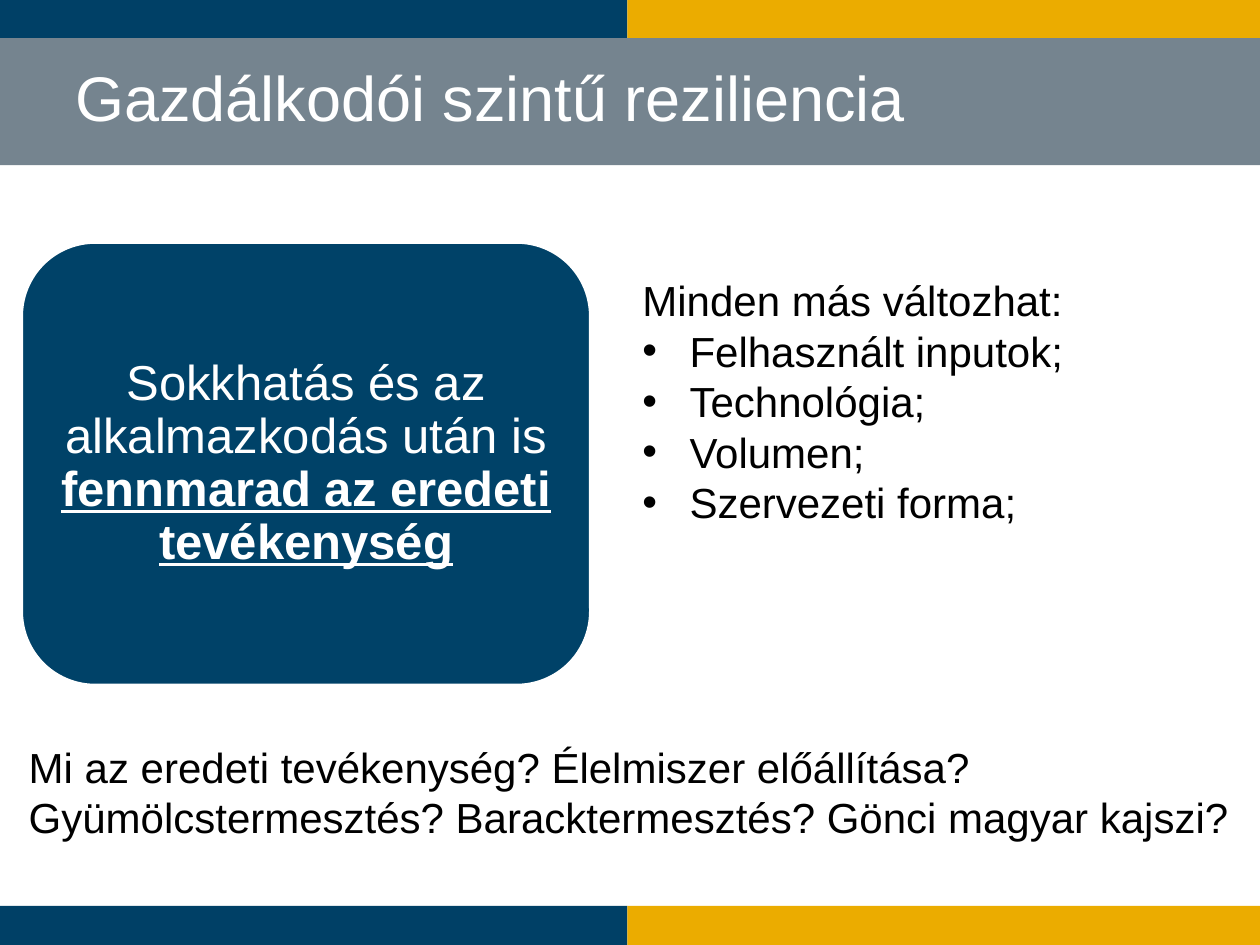
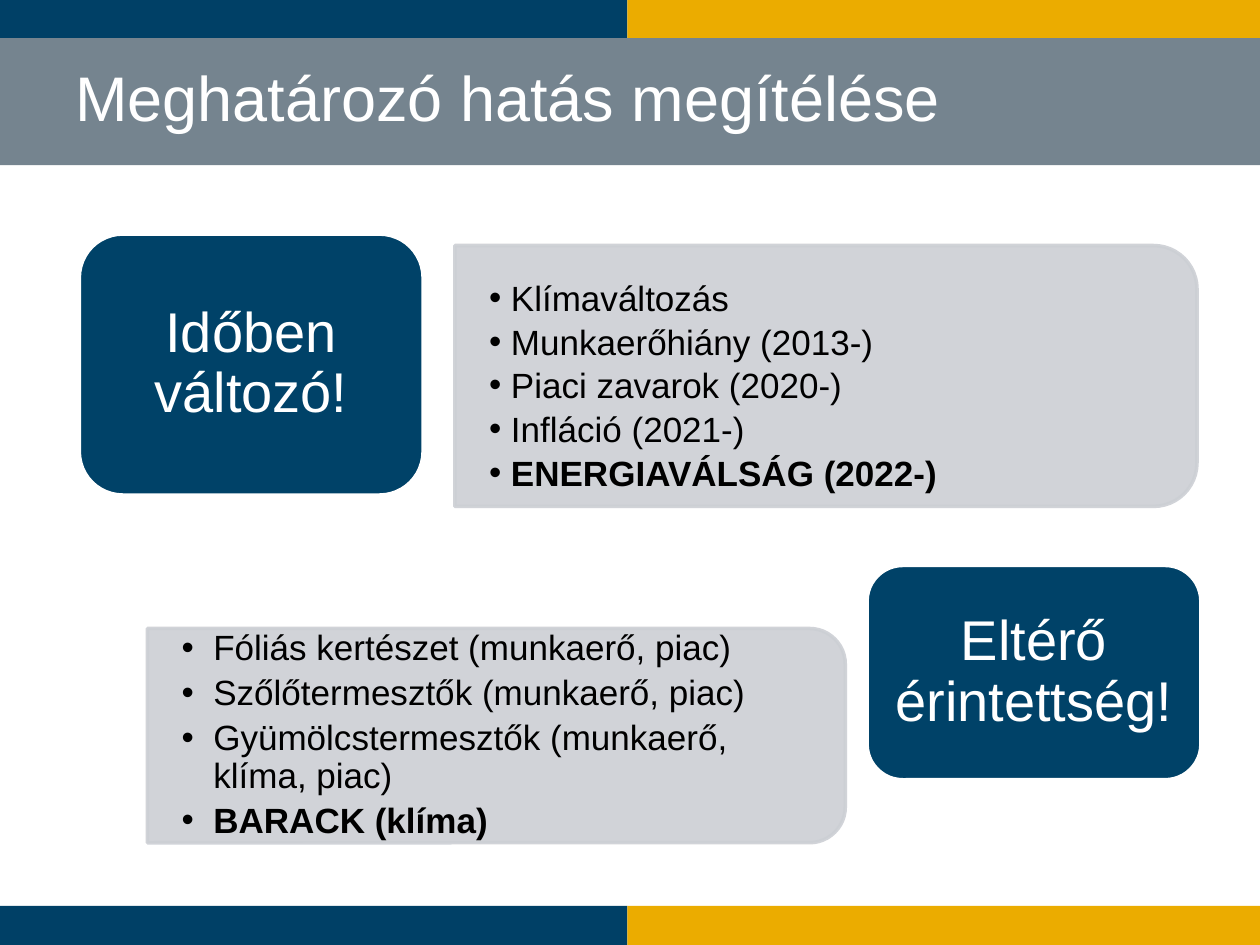
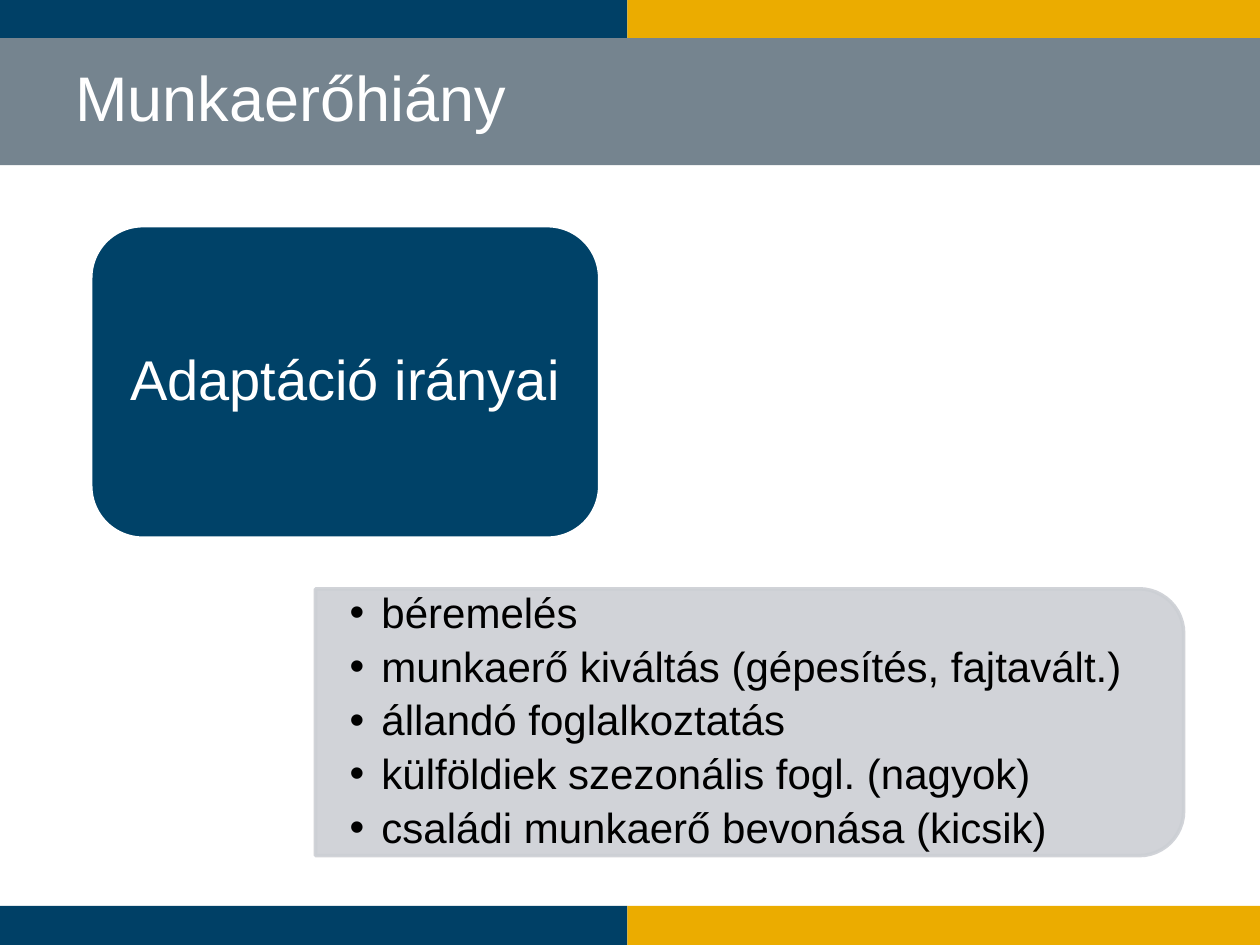
from lxml.etree import SubElement
from pptx import Presentation
from pptx.dml.color import RGBColor
from pptx.enum.shapes import MSO_SHAPE
from pptx.enum.text import MSO_ANCHOR, MSO_AUTO_SIZE, PP_ALIGN
from pptx.oxml.ns import qn
from pptx.util import Cm, Pt

FONT = "Arial"
NAVY, GOLD, SLATE = "004066", "EBAC00", "75848F"
CARD_BLUE, PANEL_GREY = "004268", "CCCFD4"
WHITE, BLACK = "FFFFFF", "000000"

SLIDE_WIDTH, SLIDE_HEIGHT = 25.4, 19.05
BAND_HEIGHT, BAND_SPLIT = 0.79, 12.65
BANDS = [
    (left, top, width, BAND_HEIGHT, color)
    for top in (0, SLIDE_HEIGHT - BAND_HEIGHT)
    for left, width, color in (
        (0, BAND_SPLIT, NAVY),
        (BAND_SPLIT, SLIDE_WIDTH - BAND_SPLIT, GOLD),
    )
] + [(0, 0.77, SLIDE_WIDTH, 2.56, SLATE)]

ONE_LIST, TWO_LISTS = 1, 3  # layout numbers in the template


def rgb(color):
    return RGBColor.from_string(color)


def set_bullet(paragraph, hanging):
    """Hang the paragraph on a dot, or clear the bullet when hanging is 0."""
    properties = paragraph._p.get_or_add_pPr()
    properties.set("marL", str(Cm(hanging)))
    properties.set("indent", str(-Cm(hanging)))
    if hanging:
        SubElement(properties, qn("a:buChar")).set("char", "•")
    else:
        SubElement(properties, qn("a:buNone"))


def write(frame, paragraphs, size, color=BLACK, align=PP_ALIGN.LEFT,
          anchor=MSO_ANCHOR.TOP, margins=(0.25, 0.13), hanging=0,
          line_spacing=1.0, gap=0, underline_strong=False):
    """Fill a frame; a paragraph is a string or a (plain, strong) pair.

    A list whose first line ends in a colon keeps that line unbulleted.
    """
    frame.word_wrap = True
    frame.auto_size = MSO_AUTO_SIZE.NONE
    frame.vertical_anchor = anchor
    frame.margin_left = frame.margin_right = Cm(margins[0])
    frame.margin_top = frame.margin_bottom = Cm(margins[1])
    for number, content in enumerate(paragraphs):
        paragraph = frame.add_paragraph() if number else frame.paragraphs[0]
        plain, strong = (content, "") if isinstance(content, str) else content
        set_bullet(paragraph, 0 if plain.endswith(":") else hanging)
        paragraph.alignment = align
        paragraph.line_spacing = line_spacing
        paragraph.space_before = Pt(gap if number else 0)
        paragraph.space_after = Pt(0)
        for words, is_strong in ((plain, False), (strong, True)):
            if words:
                run = paragraph.add_run()
                run.text = words
                run.font.name = FONT
                run.font.size = Pt(size)
                run.font.bold = is_strong
                run.font.underline = is_strong and underline_strong
                run.font.color.rgb = rgb(color)


class Deck:
    def __init__(self):
        self.presentation = Presentation()
        self.presentation.slide_width = Cm(SLIDE_WIDTH)
        self.presentation.slide_height = Cm(SLIDE_HEIGHT)
        self.slide = None

    def start_slide(self, heading, layout=ONE_LIST):
        layouts = self.presentation.slide_layouts
        self.slide = self.presentation.slides.add_slide(layouts[layout])
        if len(self.presentation.slides) == 1:
            self.put_bands_on_master()
        title = self.slide.shapes.title
        self.place(title, 1.27, 1.04, 22.86, 1.7)
        write(title.text_frame, [heading], size=36, color=WHITE)

    def put_bands_on_master(self):
        master_tree = self.presentation.slide_master.shapes.element
        for order, (left, top, width, height, color) in enumerate(BANDS):
            band = self.shape(MSO_SHAPE.RECTANGLE, left, top, width, height, color)
            band.element.xpath(".//p:cNvPr")[0].set("id", str(20 + order))
            master_tree.insert(2 + order, band.element)

    def place(self, item, left, top, width, height):
        item.left, item.top = Cm(left), Cm(top)
        item.width, item.height = Cm(width), Cm(height)

    def shape(self, kind, left, top, width, height, fill, line=None):
        shape = self.slide.shapes.add_shape(
            kind, Cm(left), Cm(top), Cm(width), Cm(height))
        shape.shadow.inherit = False
        shape.fill.solid()
        shape.fill.fore_color.rgb = rgb(fill)
        if line:
            shape.line.color.rgb = rgb(line)
            shape.line.width = Pt(2)
        else:
            shape.line.fill.background()
        return shape

    def card(self, left, top, width, height, statement, size=32, **text_format):
        card = self.shape(MSO_SHAPE.ROUNDED_RECTANGLE, left, top, width, height,
                          CARD_BLUE, WHITE)
        write(card.text_frame, [statement], size=size, color=WHITE,
              align=PP_ALIGN.CENTER, anchor=MSO_ANCHOR.MIDDLE,
              margins=(0.32, 0.16), line_spacing=0.9, **text_format)

    def bullets(self, left, top, width, height, items, slot=1, **text_format):
        """Fill a body placeholder and bring it in front of what is drawn."""
        body = self.slide.placeholders[slot]
        self.place(body, left, top, width, height)
        self.slide.shapes.element.append(body.element)
        write(body.text_frame, items, **text_format)

    def panel(self, left, top, width, height, items, slot=1, **text_format):
        """Grey list panel, turned so that its round corners face right."""
        panel = self.shape(
            MSO_SHAPE.ROUND_2_SAME_RECTANGLE,
            left + (width - height) / 2, top + (height - width) / 2,
            height, width, PANEL_GREY, PANEL_GREY)
        panel.rotation = 90
        for color in panel.element.spPr.iter(qn("a:srgbClr")):
            SubElement(color, qn("a:alpha")).set("val", "90000")
        inset = 0.05 * height
        look = dict(anchor=MSO_ANCHOR.MIDDLE, hanging=0.64, line_spacing=0.9)
        self.bullets(left, top + inset, width - inset, height - 2 * inset, items,
                     slot, margins=(0.69, 0.36), **{**look, **text_format})

    def note(self, left, top, width, height, words, size):
        box = self.slide.shapes.add_textbox(
            Cm(left), Cm(top), Cm(width), Cm(height))
        write(box.text_frame, [words], size=size)


def main():
    deck = Deck()

    deck.start_slide("Gazdálkodói szintű reziliencia")
    deck.card(0.43, 4.88, 11.48, 8.94,
              ("Sokkhatás és az alkalmazkodás után is ",
               "fennmarad az eredeti tevékenység"),
              size=28, underline_strong=True)
    deck.bullets(12.7, 5.41, 9.8, 5.38,
                 ["Minden más változhat:", "Felhasznált inputok;", "Technológia;",
                  "Volumen;", "Szervezeti forma;"],
                 size=24, hanging=0.95)
    deck.note(0.33, 14.81, 25.07, 2.31,
              "Mi az eredeti tevékenység? Élelmiszer előállítása? "
              "Gyümölcstermesztés? Baracktermesztés? Gönci magyar kajszi?",
              size=24)

    deck.start_slide("Meghatározó hatás megítélése", TWO_LISTS)
    deck.card(1.6, 4.72, 6.93, 5.26, "Időben változó!")
    deck.card(17.48, 11.4, 6.73, 4.32, "Eltérő érintettség!")
    deck.panel(9.17, 4.95, 14.96, 5.26,
               ["Klímaváltozás", "Munkaerőhiány (2013-)", "Piaci zavarok (2020-)",
                "Infláció (2021-)", ("", "ENERGIAVÁLSÁG (2022-)")],
               size=20, anchor=MSO_ANCHOR.TOP, hanging=0.44, line_spacing=1.0,
               gap=1)
    deck.panel(2.97, 12.67, 14.07, 4.32,
               ["Fóliás kertészet (munkaerő, piac)",
                "Szőlőtermesztők (munkaerő, piac)",
                "Gyümölcstermesztők (munkaerő, klíma, piac)",
                ("", "BARACK (klíma)")],
               slot=2, size=20, gap=4)

    deck.start_slide("Munkaerőhiány")
    deck.card(1.83, 4.55, 10.26, 6.3, "Adaptáció irányai")
    deck.panel(6.36, 11.87, 17.5, 5.38,
               ["béremelés", "munkaerő kiváltás (gépesítés, fajtavált.)",
                "állandó foglalkoztatás", "külföldiek szezonális fogl. (nagyok)",
                "családi munkaerő bevonása (kicsik)"],
               size=24, gap=4.8)

    deck.presentation.save("out.pptx")


if __name__ == "__main__":
    main()
